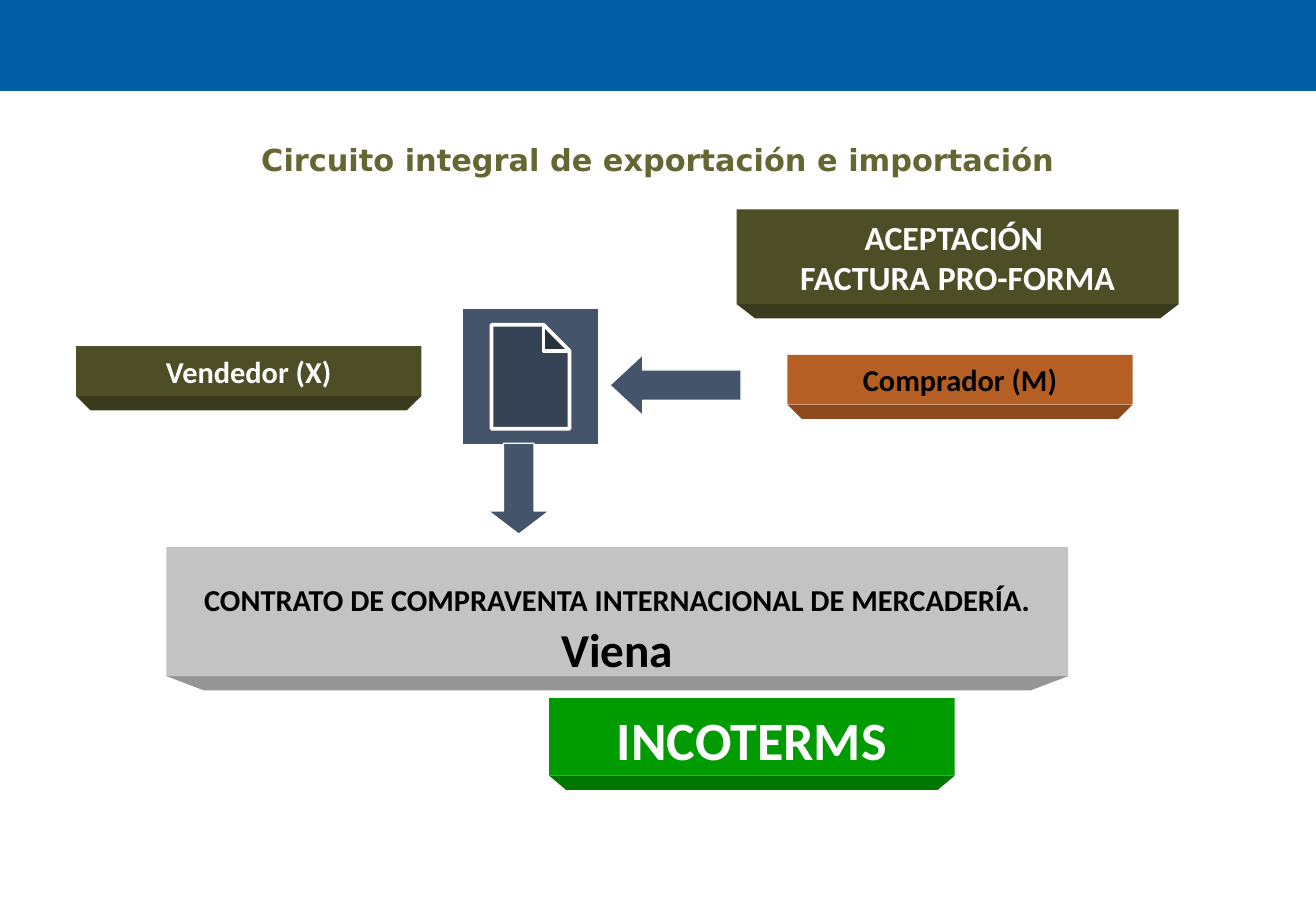
from dataclasses import dataclass

from pptx import Presentation
from pptx.dml.color import RGBColor
from pptx.enum.shapes import MSO_SHAPE
from pptx.enum.text import MSO_ANCHOR, MSO_AUTO_SIZE, PP_ALIGN
from pptx.util import Cm, Pt


@dataclass(frozen=True)
class Theme:
    """Colours, fonts and type sizes of the slide."""
    band: str = "005DA3"
    heading: str = "666633"
    slate: str = "44546A"
    white: str = "FFFFFF"
    black: str = "000000"
    olive: tuple = ("4D4D26", "3A3A1D")
    orange: tuple = ("B65F24", "8C491C")
    grey: tuple = ("C3C3C3", "959595")
    green: tuple = ("009B00", "007600")
    body_font: str = "Calibri"
    heading_font: str = "DejaVu Sans"
    small: int = 18
    medium: int = 20
    large: int = 28
    huge: int = 32


THEME = Theme()
SLIDE_WIDTH, SLIDE_HEIGHT = 27.51, 19.05
BEVEL_DEPTH = 0.3
BEVEL_INSET = 0.042


def paint(shape, fill, outline=None, width=0.75):
    """Give a shape a flat fill and an optional outline."""
    shape.shadow.inherit = False
    shape.fill.solid()
    shape.fill.fore_color.rgb = RGBColor.from_string(fill)
    if outline:
        shape.line.color.rgb = RGBColor.from_string(outline)
        shape.line.width = Pt(width)
    else:
        shape.line.fill.background()


def add_figure(slide, preset, place, fill, outline=None, width=0.75):
    """Add a painted preset shape at a place given in centimetres."""
    figure = slide.shapes.add_shape(preset, *map(Cm, place))
    paint(figure, fill, outline, width)
    return figure


def write(frame, paragraphs, font, color, top=0):
    """Write centred bold paragraphs, each a list of (text, size) runs."""
    frame.word_wrap = True
    frame.auto_size = MSO_AUTO_SIZE.NONE
    frame.vertical_anchor = MSO_ANCHOR.MIDDLE
    frame.margin_top, frame.margin_bottom = Cm(top), 0
    for index, runs in enumerate(paragraphs):
        paragraph = frame.add_paragraph() if index else frame.paragraphs[0]
        paragraph.alignment = PP_ALIGN.CENTER
        for text, size in runs:
            run = paragraph.add_run()
            run.text = text
            run.font.name = font
            run.font.size = Pt(size)
            run.font.bold = True
            run.font.color.rgb = RGBColor.from_string(color)


def add_block(slide, place, shades, paragraphs, color, top=0):
    """Add a labelled block with a bevelled lower edge."""
    left, upper, width, height = place
    face, edge = shades
    lower, inset = upper + height, width * BEVEL_INSET
    bevel = slide.shapes.build_freeform(Cm(left), Cm(lower))
    bevel.add_line_segments([
        (Cm(left + width), Cm(lower)),
        (Cm(left + width - inset), Cm(lower + BEVEL_DEPTH)),
        (Cm(left + inset), Cm(lower + BEVEL_DEPTH)),
    ])
    paint(bevel.convert_to_shape(), edge)
    front = add_figure(slide, MSO_SHAPE.RECTANGLE, place, face)
    write(front.text_frame, paragraphs, THEME.body_font, color, top)


def add_arrow(slide, preset, place, head):
    """Add a slate block arrow with the given head length."""
    arrow = add_figure(slide, preset, place, THEME.slate, THEME.white)
    arrow.adjustments[0] = 0.5
    arrow.adjustments[1] = head


def add_heading(slide, text):
    """Place and format the title."""
    title = slide.shapes.title
    title.left, title.top, title.width, title.height = map(
        Cm, (2.33, 2.82, 22.84, 1.02))
    write(title.text_frame, [[(text, THEME.small)]],
          THEME.heading_font, THEME.heading)


def main():
    """Build the slide and save it."""
    deck = Presentation()
    deck.slide_width, deck.slide_height = Cm(SLIDE_WIDTH), Cm(SLIDE_HEIGHT)
    slide = deck.slides.add_slide(deck.slide_layouts[5])

    add_figure(slide, MSO_SHAPE.RECTANGLE, (0, 0, SLIDE_WIDTH, 1.9), THEME.band)
    add_heading(slide, "Circuito integral de exportación e importación")
    add_block(slide, (15.4, 4.38, 9.24, 1.98), THEME.olive,
              [[("ACEPTACIÓN ", THEME.medium)],
               [("FACTURA PRO-FORMA", THEME.medium)]], THEME.white)
    add_block(slide, (1.59, 7.24, 7.22, 1.04), THEME.olive,
              [[("Vendedor (X)", THEME.small)]], THEME.white)
    add_block(slide, (16.46, 7.42, 7.22, 1.04), THEME.orange,
              [[("Comprador (M)", THEME.small)]], THEME.black)
    add_arrow(slide, MSO_SHAPE.LEFT_ARROW, (12.75, 7.42, 2.74, 1.27), 0.54)
    add_figure(slide, MSO_SHAPE.ACTION_BUTTON_DOCUMENT, (9.64, 6.43, 2.9, 2.9),
               THEME.slate, THEME.white, 2.25)
    add_block(slide, (3.48, 11.44, 18.85, 2.7), THEME.grey,
              [[("CONTRATO DE COMPRAVENTA INTERNACIONAL DE MERCADERÍA.",
                 THEME.small), (" Viena", THEME.large)]], THEME.black, top=0.38)
    add_arrow(slide, MSO_SHAPE.DOWN_ARROW, (10.21, 9.27, 1.27, 1.9), 0.38)
    add_block(slide, (11.48, 14.6, 8.48, 1.62), THEME.green,
              [[("INCOTERMS", THEME.huge)]], THEME.white, top=0.1)
    deck.save("out.pptx")


if __name__ == "__main__":
    main()
